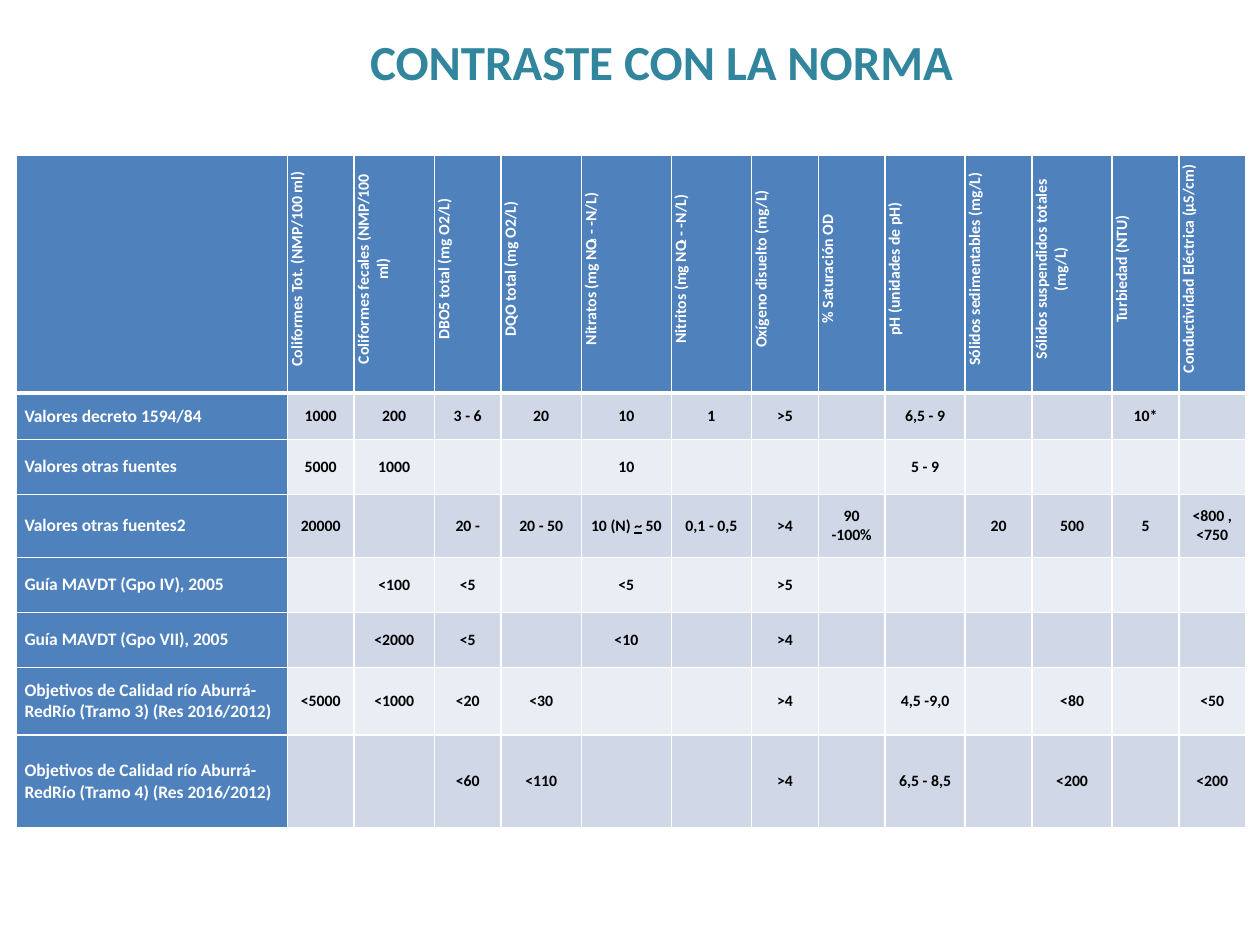
from lxml.etree import SubElement
from pptx import Presentation
from pptx.dml.color import RGBColor
from pptx.enum.text import MSO_ANCHOR, MSO_AUTO_SIZE, PP_ALIGN
from pptx.oxml.ns import qn
from pptx.util import Pt

BLUE, WHITE, BLACK, TEAL = "4F81BD", "FFFFFF", "000000", "31859C"
BANDS = ["D0D8E8", "E9EDF4"]


def color(value):
    return RGBColor.from_string(value)


def add_border(cell, side, width):
    line = SubElement(cell._tc.get_or_add_tcPr(), qn(f"a:ln{side}"), w=str(Pt(width)))
    fill = SubElement(line, qn("a:solidFill"))
    SubElement(fill, qn("a:srgbClr"), val=WHITE)


# A tuple holds text before, marked text and text after:
# the mark is a subscript in the header and an underline in the body.
header = [
    "", "Coliformes Tot. (NMP/100 ml)", "Coliformes fecales (NMP/100 ml)",
    "DBO5 total (mg O2/L)", "DQO total (mg O2/L)",
    ("Nitratos (mg NO", "3", "- -N/L)"), ("Nitritos (mg NO", "2", "- -N/L)"),
    "Oxígeno disuelto (mg/L)", "% Saturación OD", "pH (unidades de pH)",
    "Sólidos sedimentables (mg/L)", "Sólidos suspendidos totales (mg/L)",
    "Turbiedad (NTU)", "Conductividad Eléctrica (µS/cm)",
]
top_anchored = ["% Saturación OD", "Conductividad Eléctrica (µS/cm)"]
body = [
    ["Valores decreto 1594/84", "1000", "200", "3 - 6", "20", "10", "1", ">5",
     "", "6,5 - 9", "", "", "10*", ""],
    ["Valores otras fuentes", "5000", "1000", "", "", "10", "", "",
     "", "5 - 9", "", "", "", ""],
    ["Valores otras fuentes2", "20000", "", "20 -", "20 - 50", ("10 (N) ", "~", " 50"),
     "0,1 - 0,5", ">4", "90 -100%", "", "20", "500", "5", "<800 , <750"],
    ["Guía MAVDT (Gpo IV), 2005", "", "<100", "<5", "", "<5", "", ">5",
     "", "", "", "", "", ""],
    ["Guía MAVDT (Gpo VII), 2005", "", "<2000", "<5", "", "<10", "", ">4",
     "", "", "", "", "", ""],
    ["Objetivos de Calidad río Aburrá-RedRío (Tramo 3) (Res 2016/2012)",
     "<5000", "<1000", "<20", "<30", "", "", ">4", "", "4,5 -9,0", "", "<80", "", "<50"],
    ["Objetivos de Calidad río Aburrá-RedRío (Tramo 4) (Res 2016/2012)",
     "", "", "<60", "<110", "", "", ">4", "", "6,5 - 8,5", "", "<200", "", "<200"],
]
rows = [header] + body
narrow, wide = 38.1, 45.9
widths = [155.2, narrow, wide, narrow, wide, 51.4, wide, narrow, narrow, wide,
          narrow, wide, narrow, narrow]
heights = [85.5, 26.7, 31.4, 36, 31.4, 31.4, 38.6, 53.3]

deck = Presentation()
deck.slide_width, deck.slide_height = Pt(720), Pt(540)
page = deck.slides.add_slide(deck.slide_layouts[5])

# Title
title = page.shapes.title
title.left, title.top, title.width, title.height = Pt(45), Pt(9.5), Pt(666), Pt(51)
frame = title.text_frame
frame.text = "CONTRASTE CON LA NORMA"
frame.auto_size = MSO_AUTO_SIZE.NONE
frame.vertical_anchor = MSO_ANCHOR.MIDDLE
para = frame.paragraphs[0]
para.alignment = PP_ALIGN.CENTER
para.font.name, para.font.size, para.font.bold = "Calibri", Pt(28), True
para.font.color.rgb = color(TEAL)

# Table grid
table = page.shapes.add_table(len(rows), len(widths), Pt(9), Pt(88.6),
                              Pt(sum(widths)), Pt(sum(heights))).table
table.first_row = table.horz_banding = False
for column, width in zip(table.columns, widths):
    column.width = Pt(width)
for row, height in zip(table.rows, heights):
    row.height = Pt(height)

# Cells
for row_index, contents in enumerate(rows):
    for column_index, content in enumerate(contents):
        cell = table.cell(row_index, column_index)
        is_header, is_label = row_index == 0, column_index == 0
        cell.margin_left = cell.margin_right = Pt(5)
        cell.margin_top = cell.margin_bottom = 0
        cell.vertical_anchor = (MSO_ANCHOR.TOP if content in top_anchored
                                else MSO_ANCHOR.MIDDLE)
        for side in "LRTB":
            under_header = (row_index, side) in [(0, "B"), (1, "T")]
            add_border(cell, side, 3 if under_header else 1)
        cell.fill.solid()
        on_blue = is_header or is_label
        cell.fill.fore_color.rgb = color(BLUE if on_blue else BANDS[(row_index - 1) % 2])

        para = cell.text_frame.paragraphs[0]
        para.alignment = PP_ALIGN.LEFT if is_label else PP_ALIGN.CENTER
        if is_header and not is_label:
            cell._tc.get_or_add_tcPr().set("vert", "vert270")
            para._p.get_or_add_pPr().set("marL", str(Pt(5.65)))
        para.font.name, para.font.bold = "Calibri", True
        para.font.size = Pt(10 if is_label else 9)
        para.font.color.rgb = color(WHITE if on_blue else BLACK)
        if isinstance(content, tuple):
            for text in content:
                para.add_run().text = text
            marked = para.runs[1]
            if is_header:
                marked._r.get_or_add_rPr().set("baseline", "-25000")
            else:
                marked.font.underline = True
        elif content:
            para.add_run().text = content

deck.save("out.pptx")
